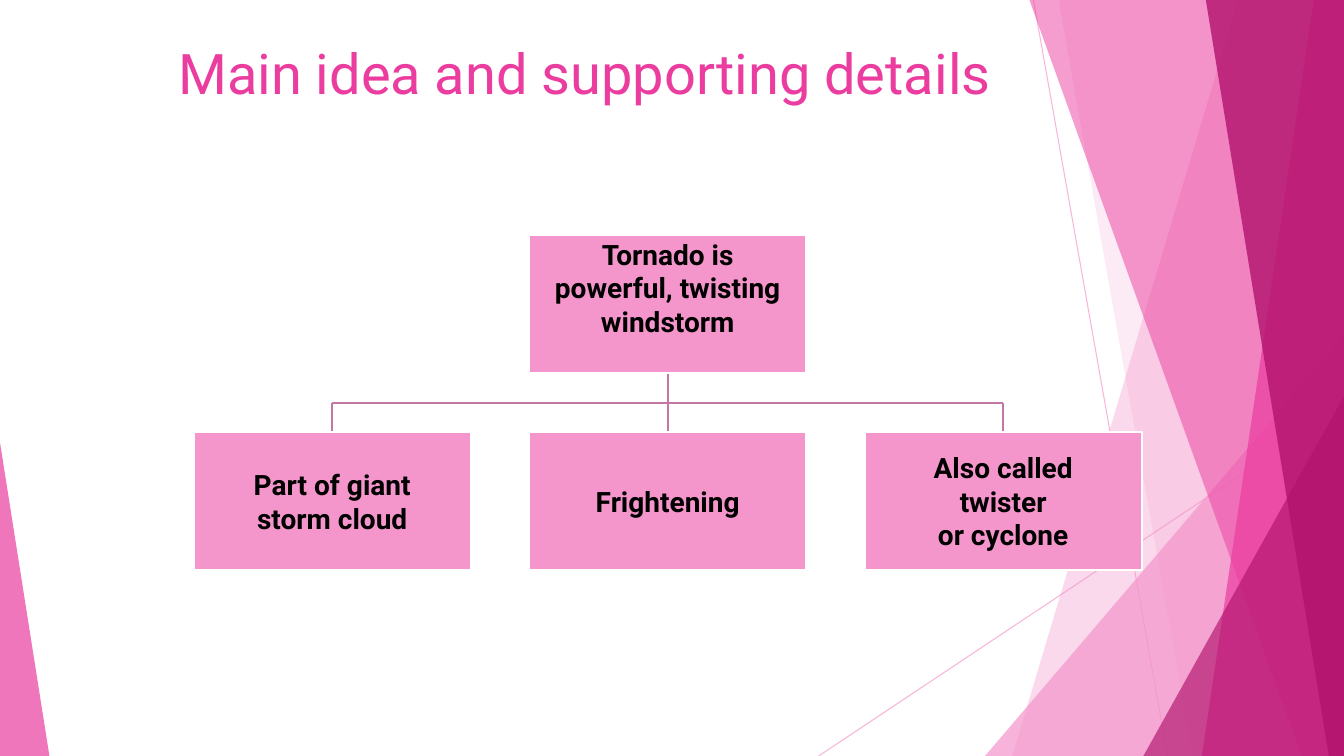
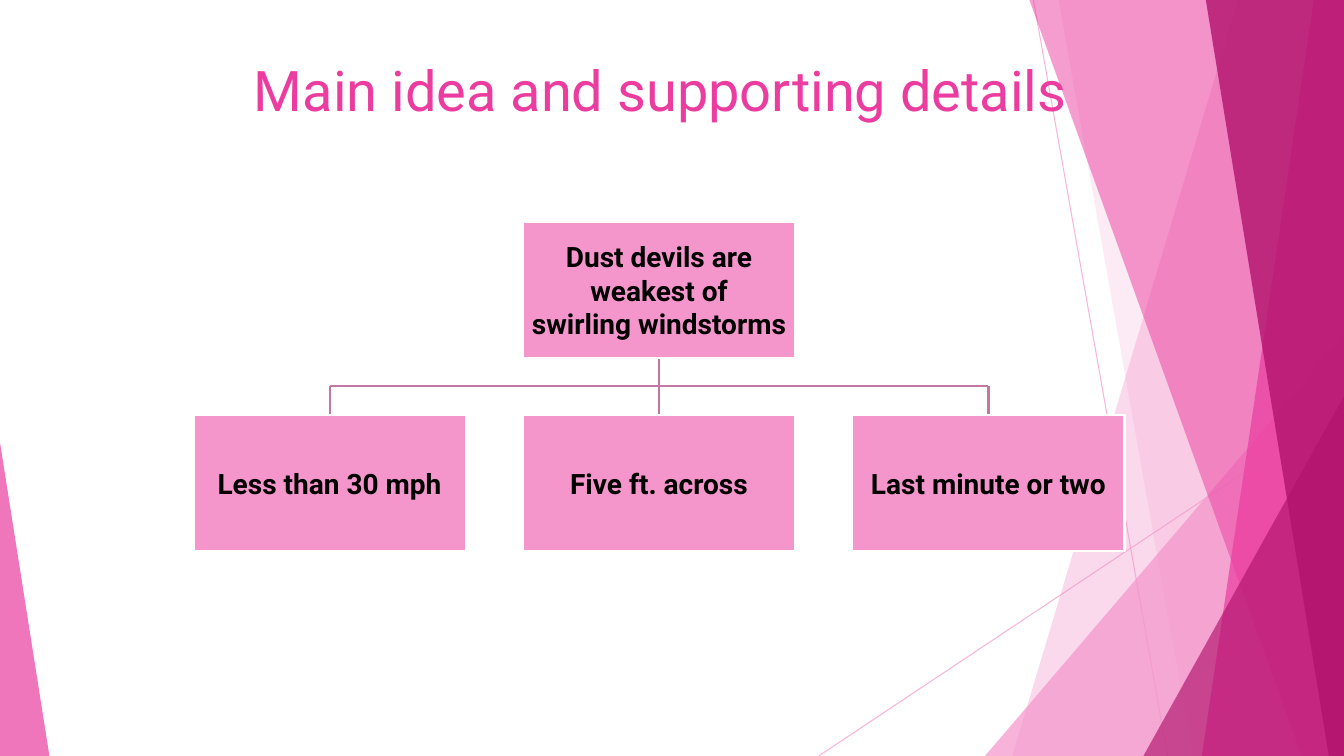
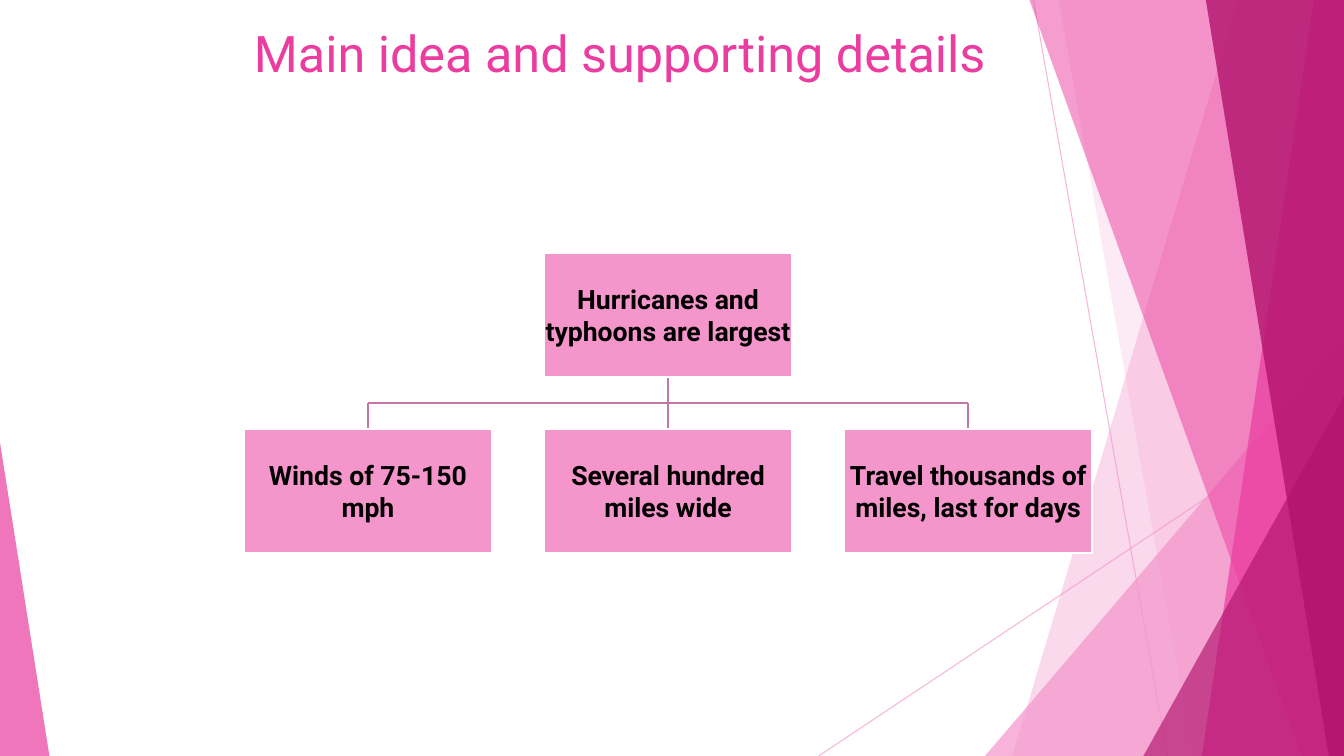
from dataclasses import dataclass

from lxml.etree import SubElement
from pptx import Presentation
from pptx.dml.color import RGBColor
from pptx.enum.shapes import MSO_CONNECTOR, MSO_SHAPE
from pptx.enum.text import MSO_ANCHOR, PP_ALIGN
from pptx.oxml.ns import qn
from pptx.util import Inches, Pt


@dataclass(frozen=True)
class Theme:
    width: float = 13.33
    height: float = 7.5
    font: str = "Roboto"
    light: str = "F496CB"
    bright: str = "EB3D9F"
    deep: str = "B2136D"
    branch: str = "C378A3"
    white: str = "FFFFFF"
    black: str = "000000"
    title_size: int = 40
    small_title_size: int = 36
    box_size: int = 20
    small_box_size: int = 19
    hairline: float = 0.75
    rule: float = 1.5
    gap_ratio: float = 0.21  # gap between boxes, as a share of box width


THEME = Theme()
TITLE = "Main idea and supporting details"


def set_values(target, values):
    for name, value in values.items():
        setattr(target, name, value)


def set_alpha(shape, percent):
    for color in shape.element.spPr.iter(qn("a:srgbClr")):
        SubElement(color, qn("a:alpha")).set("val", str(percent * 1000))


def fill_shape(shape, color):
    shape.shadow.inherit = False
    shape.fill.solid()
    shape.fill.fore_color.rgb = RGBColor.from_string(color)


def set_line(shape, color, width):
    shape.line.color.rgb = RGBColor.from_string(color)
    shape.line.width = Pt(width)


def add_line(shapes, start, end, color, width):
    points = [Inches(value) for value in (*start, *end)]
    connector = shapes.add_connector(MSO_CONNECTOR.STRAIGHT, *points)
    set_line(connector, color, width)
    SubElement(connector.element.spPr, qn("a:effectLst"))
    return connector


def write_lines(frame, lines, size, color, align, bold=False):
    """Write each line as a paragraph of its own."""
    for index, line in enumerate(lines):
        paragraph = frame.add_paragraph() if index else frame.paragraphs[0]
        paragraph.alignment = align
        run = paragraph.add_run()
        run.text = line
        set_values(run.font, {"name": THEME.font, "size": Pt(size), "bold": bold})
        run.font.color.rgb = RGBColor.from_string(color)


def add_beam(shapes, top_x, bottom_x, color, alpha):
    """Fill the full-height area from a slanted left edge to the right of the slide."""
    corners = [(THEME.width, 0), (THEME.width, THEME.height), (bottom_x, THEME.height)]
    builder = shapes.build_freeform(Inches(top_x), 0, scale=1.0)
    builder.add_line_segments([(Inches(x), Inches(y)) for x, y in corners], close=True)
    beam = builder.convert_to_shape()
    fill_shape(beam, color)
    beam.line.fill.background()
    set_alpha(beam, alpha)


def add_peak(shapes, left, top, width, apex, color, alpha):
    """Add a triangle that stands on the bottom edge of the slide."""
    box = [Inches(value) for value in (left, top, width, THEME.height - top)]
    peak = shapes.add_shape(MSO_SHAPE.ISOSCELES_TRIANGLE, *box)
    peak.adjustments[0] = apex
    fill_shape(peak, color)
    peak.line.fill.background()
    set_alpha(peak, alpha)


def decorate_layout(layout, slide):
    """Draw the facets once and hand them to the layout that all slides use."""
    for placeholder in list(layout.placeholders):
        layout.shapes.element.remove(placeholder.element)
    facets = slide.shapes.add_group_shape()
    shapes = facets.shapes
    for start, end in (((10.25, 0), (11.58, 7.5)), ((13.33, 4.03), (8.12, 7.5))):
        set_alpha(add_line(shapes, start, end, THEME.light, THEME.hairline), 70)
    add_beam(shapes, 12.28, 10.04, THEME.light, 36)
    add_beam(shapes, 10.5, 11.83, THEME.light, 20)
    add_peak(shapes, 9.77, 3.33, 3.56, 1, THEME.light, 72)
    add_beam(shapes, 10.21, 12.91, THEME.bright, 50)
    add_beam(shapes, 13.03, 11.92, THEME.bright, 70)
    add_beam(shapes, 11.96, 13.18, THEME.deep, 80)
    add_peak(shapes, 11.34, 3.93, 1.99, 1, THEME.deep, 66)
    add_peak(shapes, 0, 4.39, 0.49, 0, THEME.bright, 70)
    layout.shapes.element.append(facets.element)


def add_title(slide, left, top, width, height, size):
    box = slide.shapes.add_textbox(*[Inches(v) for v in (left, top, width, height)])
    frame = box.text_frame
    set_values(frame, {"word_wrap": True, "vertical_anchor": MSO_ANCHOR.TOP})
    write_lines(frame, [TITLE], size, THEME.bright, PP_ALIGN.LEFT)


def add_box(slide, left, top, width, lines, size, bottom_inset=0):
    area = [Inches(value) for value in (left, top, width, width / 2)]
    box = slide.shapes.add_shape(MSO_SHAPE.RECTANGLE, *area)
    fill_shape(box, THEME.light)
    set_line(box, THEME.white, THEME.rule)
    frame = box.text_frame
    set_values(frame, {
        "word_wrap": True, "vertical_anchor": MSO_ANCHOR.MIDDLE,
        "margin_left": 0, "margin_right": 0,
        "margin_top": 0, "margin_bottom": Inches(bottom_inset),
    })
    write_lines(frame, lines, size, THEME.black, PP_ALIGN.CENTER, bold=True)


def add_tree(slide, left, top, width, size, idea, details, idea_inset=0):
    """Add the main idea above its row of details, joined by branches."""
    gap = width * THEME.gap_ratio
    lefts = [left + index * (width + gap) for index in range(len(details))]
    centers = [x + width / 2 for x in lefts]
    middle = (centers[0] + centers[-1]) / 2
    idea_bottom = top + width / 2
    branch_y = idea_bottom + gap / 2
    row_top = idea_bottom + gap

    branches = [((middle, idea_bottom), (middle, branch_y)),
                ((centers[0], branch_y), (centers[-1], branch_y))]
    branches += [((x, branch_y), (x, row_top)) for x in centers]
    for start, end in branches:
        add_line(slide.shapes, start, end, THEME.branch, THEME.rule)

    add_box(slide, middle - width / 2, top, width, idea, size, idea_inset)
    for x, lines in zip(lefts, details):
        add_box(slide, x, row_top, width, lines, size)


def main():
    presentation = Presentation()
    presentation.slide_width = Inches(THEME.width)
    presentation.slide_height = Inches(THEME.height)
    blank = presentation.slide_layouts[6]
    tornado, dust_devil, hurricane = [
        presentation.slides.add_slide(blank) for _ in range(3)]
    decorate_layout(blank, tornado)

    add_title(tornado, 1.67, 0.33, 10, 1.08, THEME.title_size)
    add_tree(tornado, 1.92, 2.33, 2.75, THEME.box_size,
             ["Tornado is", "powerful, twisting", "windstorm"],
             [["Part of giant", "storm cloud"],
              ["Frightening"],
              ["Also called", "twister", "or cyclone"]],
             idea_inset=0.33)

    add_title(dust_devil, 2.42, 0.5, 8.58, 0.83, THEME.title_size)
    add_tree(dust_devil, 1.92, 2.2, 2.7, THEME.box_size,
             ["Dust devils are", "weakest of", "swirling windstorms"],
             [["Less than 30 mph"], ["Five ft. across"], ["Last minute or two"]])

    add_title(hurricane, 2.42, 0.17, 8.08, 1.33, THEME.small_title_size)
    add_tree(hurricane, 2.42, 2.51, 2.46, THEME.small_box_size,
             ["Hurricanes and", "typhoons are largest"],
             [["Winds of 75-150 mph"],
              ["Several hundred", "miles wide"],
              ["Travel thousands of", "miles, last for days"]])

    presentation.save("out.pptx")


if __name__ == "__main__":
    main()
